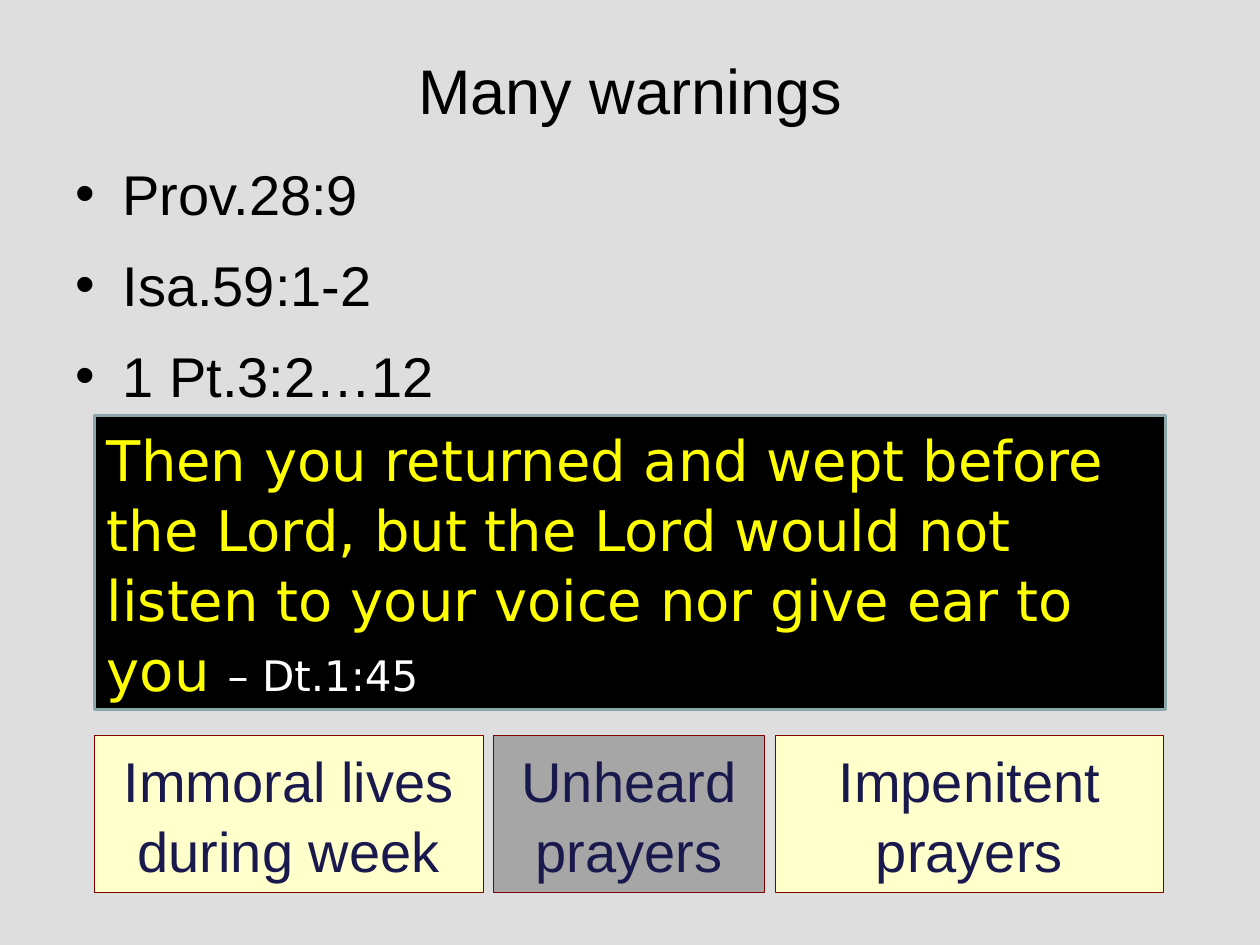
from lxml.etree import SubElement
from pptx import Presentation
from pptx.dml.color import RGBColor
from pptx.enum.shapes import MSO_SHAPE
from pptx.enum.text import MSO_ANCHOR, PP_ALIGN
from pptx.oxml.ns import qn
from pptx.util import Pt

TITLE = "Many warnings"
REFERENCES = ["Prov.28:9", "Isa.59:1-2", "1 Pt.3:2…12"]
# Runs: text, size, colour
QUOTE = [
    ("Then you returned and wept before the Lord, but the Lord would not "
     "listen to your voice nor give ear to you ", 32, "FFFF00"),
    ("– Dt.1:45", 24, "FFFFFF"),
]
# Causes and result: text, width, fill
PANELS = [
    ("Immoral lives during week", 222, "FFFFCC"),
    ("Unheard prayers", 155, "A6A6A6"),
    ("Impenitent prayers", 222, "FFFFCC"),
]
LEFT, PANEL_TOP, PANEL_HEIGHT, GAP = 54, 420, 90, 6
LINE_SPACING = 1.04
BULLET_INDENT = 27


def color(hex_code):
    return RGBColor.from_string(hex_code)


def add_run(paragraph, text, size, hex_code, font_name="Arial"):
    run = paragraph.add_run()
    run.text = text
    run.font.size = Pt(size)
    run.font.name = font_name
    run.font.color.rgb = color(hex_code)


def add_bullet(paragraph):
    properties = paragraph._p.get_or_add_pPr()
    properties.set("marL", str(Pt(BULLET_INDENT)))
    properties.set("indent", str(-Pt(BULLET_INDENT)))
    SubElement(properties, qn("a:buFont"), typeface="Arial")
    SubElement(properties, qn("a:buChar"), char="•")


def add_panel(slide, box, fill, line, line_width, runs, font_name, alignment):
    panel = slide.shapes.add_shape(MSO_SHAPE.RECTANGLE, *map(Pt, box))
    panel.shadow.inherit = False
    panel.fill.solid()
    panel.fill.fore_color.rgb = color(fill)
    panel.line.color.rgb = color(line)
    panel.line.width = Pt(line_width)
    frame = panel.text_frame
    frame.word_wrap = True
    frame.vertical_anchor = MSO_ANCHOR.MIDDLE
    paragraph = frame.paragraphs[0]
    paragraph.alignment = alignment
    paragraph.line_spacing = LINE_SPACING
    for text, size, hex_code in runs:
        add_run(paragraph, text, size, hex_code, font_name)


def add_title(slide):
    title = slide.shapes.title
    title.left, title.top, title.width, title.height = map(Pt, (36, 6, 648, 90))
    title.text_frame.vertical_anchor = MSO_ANCHOR.MIDDLE
    paragraph = title.text_frame.paragraphs[0]
    paragraph.alignment = PP_ALIGN.CENTER
    add_run(paragraph, TITLE, 36, "000000")


def add_references(slide):
    frame = slide.shapes.add_textbox(*map(Pt, (36, 86, 648, 390))).text_frame
    frame.word_wrap = True
    for index, reference in enumerate(REFERENCES):
        paragraph = frame.add_paragraph() if index else frame.paragraphs[0]
        add_bullet(paragraph)
        paragraph.line_spacing = LINE_SPACING
        paragraph.space_before = Pt(6 if index else 0)
        paragraph.space_after = Pt(6)
        add_run(paragraph, reference, 32, "000000")


def main():
    presentation = Presentation()
    presentation.slide_width, presentation.slide_height = Pt(720), Pt(540)
    slide = presentation.slides.add_slide(presentation.slide_layouts[5])
    slide.background.fill.solid()
    slide.background.fill.fore_color.rgb = color("DEDEDE")

    add_title(slide)
    add_references(slide)
    add_panel(slide, (LEFT, 237.5, 612, 168), "000000", "8AA6A8", 2,
              QUOTE, "DejaVu Sans", PP_ALIGN.LEFT)
    left = LEFT
    for text, width, fill in PANELS:
        add_panel(slide, (left, PANEL_TOP, width, PANEL_HEIGHT), fill, "800000",
                  0.25, [(text, 32, "19194D")], "Arial", PP_ALIGN.CENTER)
        left += width + GAP

    presentation.save("out.pptx")


if __name__ == "__main__":
    main()
